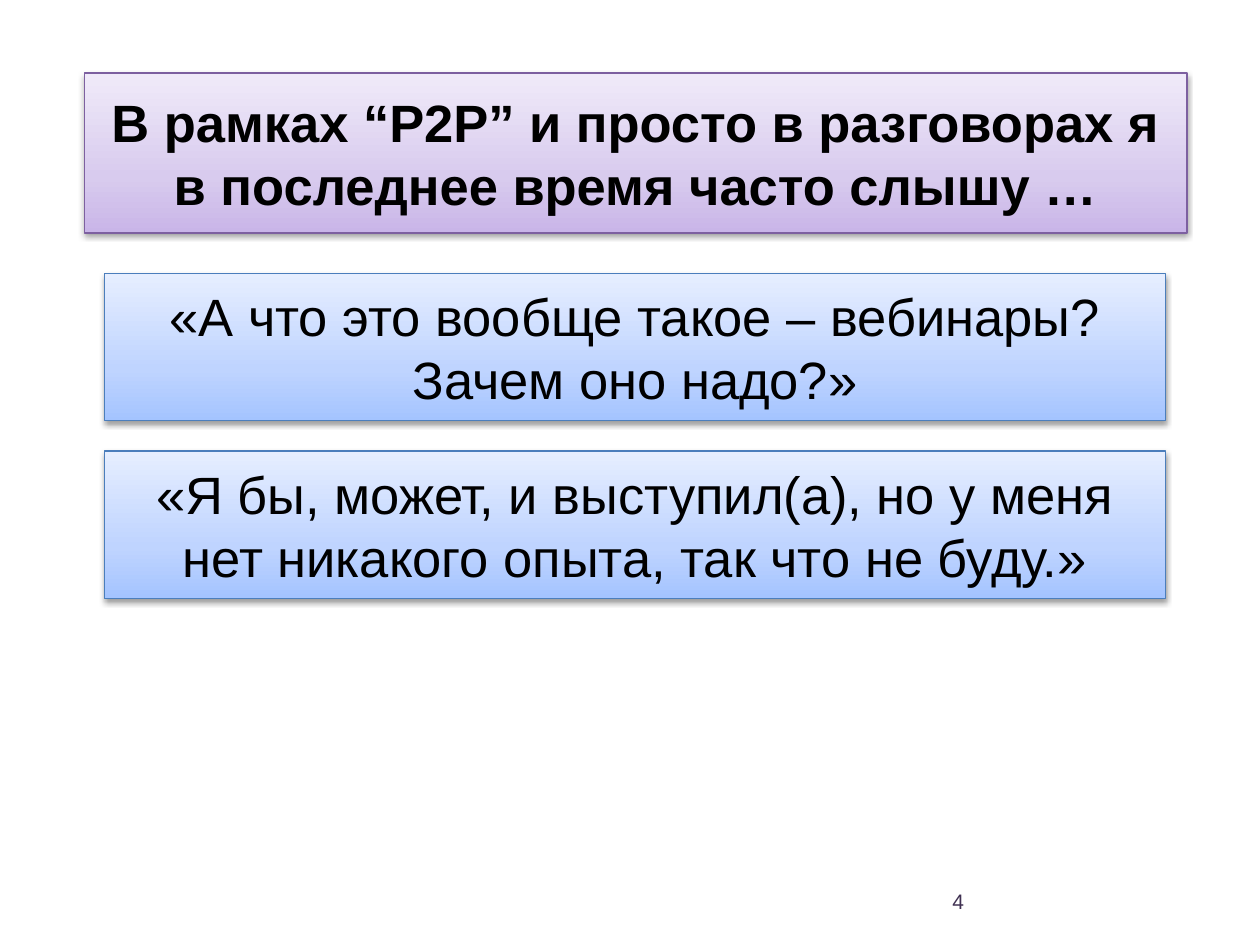
from copy import deepcopy
from dataclasses import dataclass

from lxml import etree
from pptx import Presentation
from pptx import util as u
from pptx.dml import color as dml
from pptx.enum import shapes, text
from pptx.oxml import ns

FONT = "Arial"
BLACK = "000000"
STOPS = (0, 0.35, 1)


@dataclass(frozen=True)
class Style:
    line: str
    fades: tuple[str, str, str]
    bold: bool = False


@dataclass(frozen=True)
class Panel:
    left: float
    top: float
    width: float
    height: float
    style: Style
    lines: tuple[str, ...]


PURPLE = Style("7D60A0", ("C9B5E8", "D8CBEE", "F0EAF9"), bold=True)
BLUE = Style("4B7EBC", ("A4C4FF", "BFD4FF", "E6EEFF"))

TITLE = Panel(0.67, 0.58, 8.75, 1.27, PURPLE,
              ("В рамках “P2P” и просто в разговорах я в последнее время часто слышу …",))
QUOTES = (
    ("«А что это вообще такое – вебинары?", "Зачем оно надо?»"),
    ("«Я бы, может, и выступил(а), но у меня нет никакого опыта, так что не буду.»",),
)
QUOTE_TOP, QUOTE_STEP = 2.17, 1.41


def tint(code: str) -> dml.RGBColor:
    return dml.RGBColor.from_string(code)


def write(shape, lines: tuple[str, ...], size: float, hue: str, align, bold: bool = False) -> None:
    frame = shape.text_frame
    frame.word_wrap = True
    frame.vertical_anchor = text.MSO_ANCHOR.MIDDLE
    for i, line in enumerate(lines):
        para = frame.add_paragraph() if i else frame.paragraphs[0]
        para.alignment = align
        run = para.add_run()
        run.text = line
        run.font.name = FONT
        run.font.size = u.Pt(size)
        run.font.bold = bold
        run.font.color.rgb = tint(hue)


def fade(shape, hues: tuple[str, str, str]) -> None:
    shape.fill.gradient()
    shape.fill.gradient_angle = 90
    stops = shape._element.spPr.find(".//" + ns.qn("a:gsLst"))
    stops.append(deepcopy(stops[0]))
    for stop, place, hue in zip(shape.fill.gradient_stops, STOPS, hues):
        stop.position = place
        stop.color.rgb = tint(hue)


def shade(shape) -> None:
    shape.shadow.inherit = False
    effects = shape._element.spPr.find(ns.qn("a:effectLst"))
    outer = etree.SubElement(effects, ns.qn("a:outerShdw"), blurRad=str(u.Pt(3.1)),
                             dist=str(u.Pt(1.6)), dir="5400000", rotWithShape="0")
    hue = etree.SubElement(outer, ns.qn("a:srgbClr"), val=BLACK)
    etree.SubElement(hue, ns.qn("a:alpha"), val="38000")


def draw(slide, panel: Panel) -> None:
    box = slide.shapes.add_shape(
        shapes.MSO_SHAPE.RECTANGLE, u.Inches(panel.left), u.Inches(panel.top),
        u.Inches(panel.width), u.Inches(panel.height))
    fade(box, panel.style.fades)
    box.line.color.rgb = tint(panel.style.line)
    box.line.width = u.Pt(0.75)
    shade(box)
    write(box, panel.lines, 30, BLACK, text.PP_ALIGN.CENTER, panel.style.bold)


def main() -> None:
    """Build the slide of overheard remarks about webinars."""
    deck = Presentation()
    deck.slide_width, deck.slide_height = u.Inches(10), u.Inches(7.5)
    slide = deck.slides.add_slide(deck.slide_layouts[6])
    draw(slide, TITLE)
    for i, lines in enumerate(QUOTES):
        draw(slide, Panel(0.83, QUOTE_TOP + i * QUOTE_STEP, 8.42, 1.17, BLUE, lines))
    number = slide.shapes.add_textbox(u.Inches(5.42), u.Inches(6.95), u.Inches(2.33), u.Inches(0.4))
    write(number, ("4",), 12, "403152", text.PP_ALIGN.RIGHT)
    deck.save("out.pptx")


if __name__ == "__main__":
    main()
